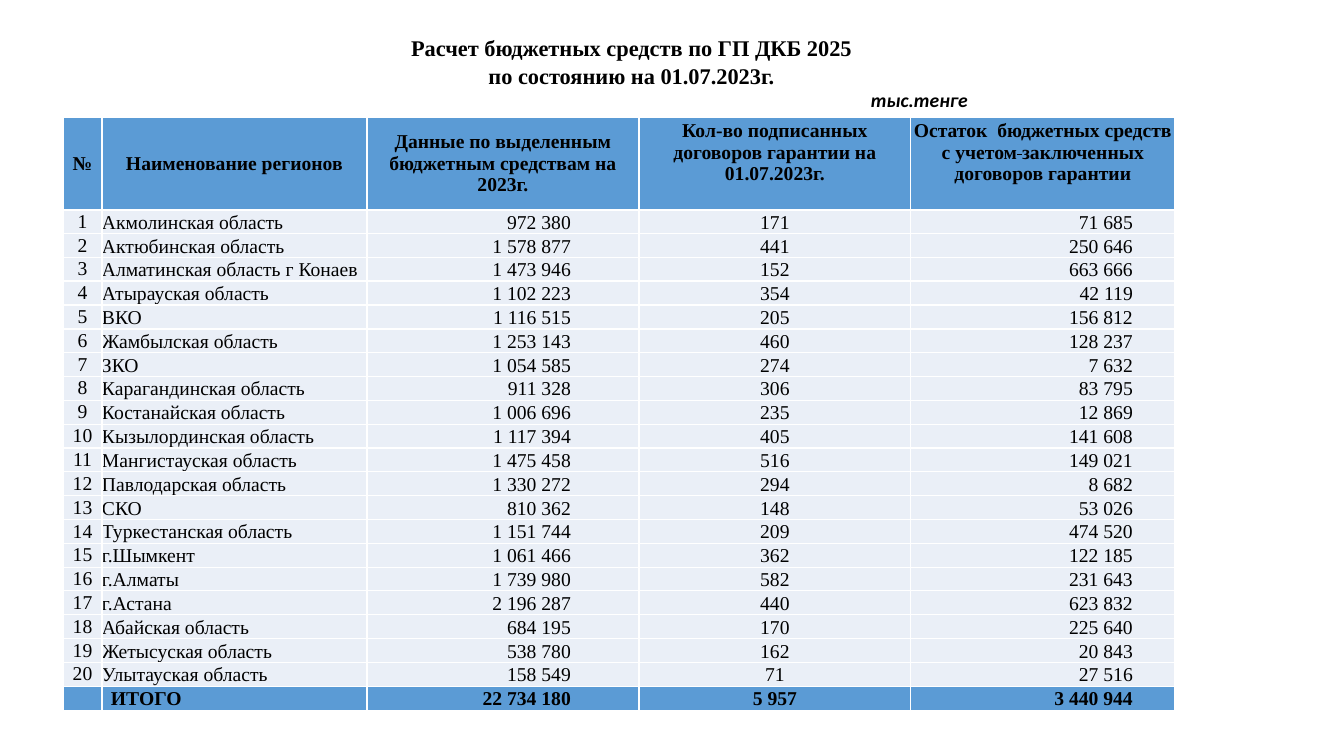
import dataclasses

import pptx
import pptx.dml.color
import pptx.enum.text
import pptx.oxml
import pptx.oxml.ns
import pptx.util

PX = 914400 / 100.8
ALIGN = pptx.enum.text.PP_ALIGN
ANCHOR = pptx.enum.text.MSO_ANCHOR


@dataclasses.dataclass(frozen=True)
class Theme:
    serif: str = "Times New Roman"
    sans: str = "Calibri"
    ink: str = "000000"
    head: str = "5B9BD5"
    body: str = "EAEFF7"
    rule: str = "FFFFFF"
    title: int = 16
    text: int = 14


THEME = Theme()

# Table content; a tuple is text whose every second part is struck out
HEADS = [
    "№",
    "Наименование регионов",
    "Данные по выделенным бюджетным средствам на 2023г.",
    "Кол-во подписанных договоров гарантии на 01.07.2023г.",
    ("Остаток  бюджетных средств с учетом", " ",
     "заключенных договоров гарантии"),
]
REGIONS = [
    ("Акмолинская область", 972380, 171, 71685),
    ("Актюбинская область", 1578877, 441, 250646),
    ("Алматинская область г Конаев", 1473946, 152, 663666),
    ("Атырауская область", 1102223, 354, 42119),
    ("ВКО", 1116515, 205, 156812),
    ("Жамбылская область", 1253143, 460, 128237),
    ("ЗКО", 1054585, 274, 7632),
    ("Карагандинская область", 911328, 306, 83795),
    ("Костанайская область", 1006696, 235, 12869),
    ("Кызылординская область", 1117394, 405, 141608),
    ("Мангистауская область", 1475458, 516, 149021),
    ("Павлодарская область", 1330272, 294, 8682),
    ("СКО", 810362, 148, 53026),
    ("Туркестанская область", 1151744, 209, 474520),
    ("г.Шымкент", 1061466, 362, 122185),
    ("г.Алматы", 1739980, 582, 231643),
    ("г.Астана", 2196287, 440, 623832),
    ("Абайская область", 684195, 170, 225640),
    ("Жетысуская область", 538780, 162, 20843),
    ("Улытауская область", 158549, 71, 27516),
]
TOTAL = ("ИТОГО", 22734180, 5957, 3440944)

# Table grid in px
LEFT, TOP = 63, 117
WIDTHS = [39, 265, 272, 272, 264]
HEAD_H, BODY_H = 93, 496
ALIGNS = [ALIGN.CENTER, ALIGN.LEFT, ALIGN.RIGHT, ALIGN.CENTER, ALIGN.RIGHT]
RIGHTS = [0, 0, 68, 0, 42]


def px(n):
    return pptx.util.Emu(round(n * PX))


def rgb(code):
    return pptx.dml.color.RGBColor.from_string(code)


def group(num):
    return f"{num:,}".replace(",", " ")


def write(frame, text, size=THEME.text, face=THEME.serif, bold=False,
          slant=False, align=ALIGN.CENTER, anchor=ANCHOR.TOP,
          pads=(0, 0, 0, 0), wrap=True, space=None):
    """Fill a text frame; pads are left, top, right, bottom in px."""
    frame.word_wrap = wrap
    frame.vertical_anchor = anchor
    (frame.margin_left, frame.margin_top,
     frame.margin_right, frame.margin_bottom) = map(px, pads)
    para = frame.paragraphs[0]
    para.alignment = align
    para.line_spacing = space
    parts = text if isinstance(text, tuple) else (text,)
    for i, part in enumerate(parts):
        for j, line in enumerate(part.split("\n")):
            if j:
                para.add_line_break()
            run = para.add_run()
            run.text = line
            font = run.font
            font.name, font.size = face, pptx.util.Pt(size)
            font.bold, font.italic = bold, slant
            font.color.rgb = rgb(THEME.ink)
            if i % 2:
                run._r.get_or_add_rPr().set("strike", "sngStrike")


def border(cell):
    """Draw 1 pt rules on all four sides of a cell."""
    props = cell._tc.get_or_add_tcPr()
    for side in "LRTB":
        props.append(pptx.oxml.parse_xml(
            f'<a:ln{side} {pptx.oxml.ns.nsdecls("a")} w="12700"><a:solidFill>'
            f'<a:srgbClr val="{THEME.rule}"/></a:solidFill></a:ln{side}>'))


def put(cell, text, fill, **style):
    """Set the text, rules and fill of one cell."""
    pads = style.pop("pads", (0, 0, 0, 0))
    anchor = style.pop("anchor", ANCHOR.MIDDLE)
    (cell.margin_left, cell.margin_top,
     cell.margin_right, cell.margin_bottom) = map(px, pads)
    cell.vertical_anchor = anchor
    border(cell)
    cell.fill.solid()
    cell.fill.fore_color.rgb = rgb(fill)
    if text:
        write(cell.text_frame, text, **style)
    else:
        # Keep a blank cell as low as its row
        cell.text_frame.paragraphs[0]._p.append(pptx.oxml.parse_xml(
            f'<a:endParaRPr {pptx.oxml.ns.nsdecls("a")} '
            f'sz="{THEME.text * 100}"/>'))


def add_title(slide):
    title = slide.shapes.title
    title.left, title.top, title.width, title.height = map(
        px, (42, 28, 1179, 60))
    write(title.text_frame,
          "Расчет бюджетных средств по ГП ДКБ 2025\n"
          "по состоянию на 01.07.2023г.",
          size=THEME.title, bold=True, pads=(9, 5, 9, 0), space=1.05)


def add_unit(slide):
    box = slide.shapes.add_textbox(*map(px, (858, 88, 110, 24)))
    write(box.text_frame, "тыс.тенге", face=THEME.sans, bold=True,
          slant=True, align=ALIGN.RIGHT)


def add_grid(slide):
    count = len(REGIONS) + 1
    shape = slide.shapes.add_table(
        count + 1, len(WIDTHS),
        *map(px, (LEFT, TOP, sum(WIDTHS), HEAD_H + BODY_H)))
    table = shape.table
    table.first_row = table.horz_banding = False
    for col, width in zip(table.columns, WIDTHS):
        col.width = px(width)

    # Row edges share out the body height in whole px
    edges = [BODY_H * i // count for i in range(count + 1)]
    table.rows[0].height = px(HEAD_H)
    for i in range(count):
        table.rows[i + 1].height = px(edges[i + 1] - edges[i])

    # Header: the last two texts sit one line higher
    for c, text in enumerate(HEADS):
        put(table.cell(0, c), text, THEME.head, bold=True,
            pads=(0, 0, 0, 22 if c > 2 else 0))

    # Regions and total
    for r, (name, *nums) in enumerate(REGIONS + [TOTAL], 1):
        last = r == count
        texts = ["" if last else str(r), name, *map(group, nums)]
        for c, text in enumerate(texts):
            put(table.cell(r, c), text, THEME.head if last else THEME.body,
                bold=last, align=ALIGNS[c],
                anchor=ANCHOR.BOTTOM if c else ANCHOR.MIDDLE,
                pads=(9 if last and c == 1 else 0, 0, RIGHTS[c], 0))


def main():
    deck = pptx.Presentation()
    deck.slide_width, deck.slide_height = px(1344), px(756)
    slide = deck.slides.add_slide(deck.slide_layouts[5])
    add_title(slide)
    add_unit(slide)
    add_grid(slide)
    deck.save("out.pptx")


if __name__ == "__main__":
    main()
